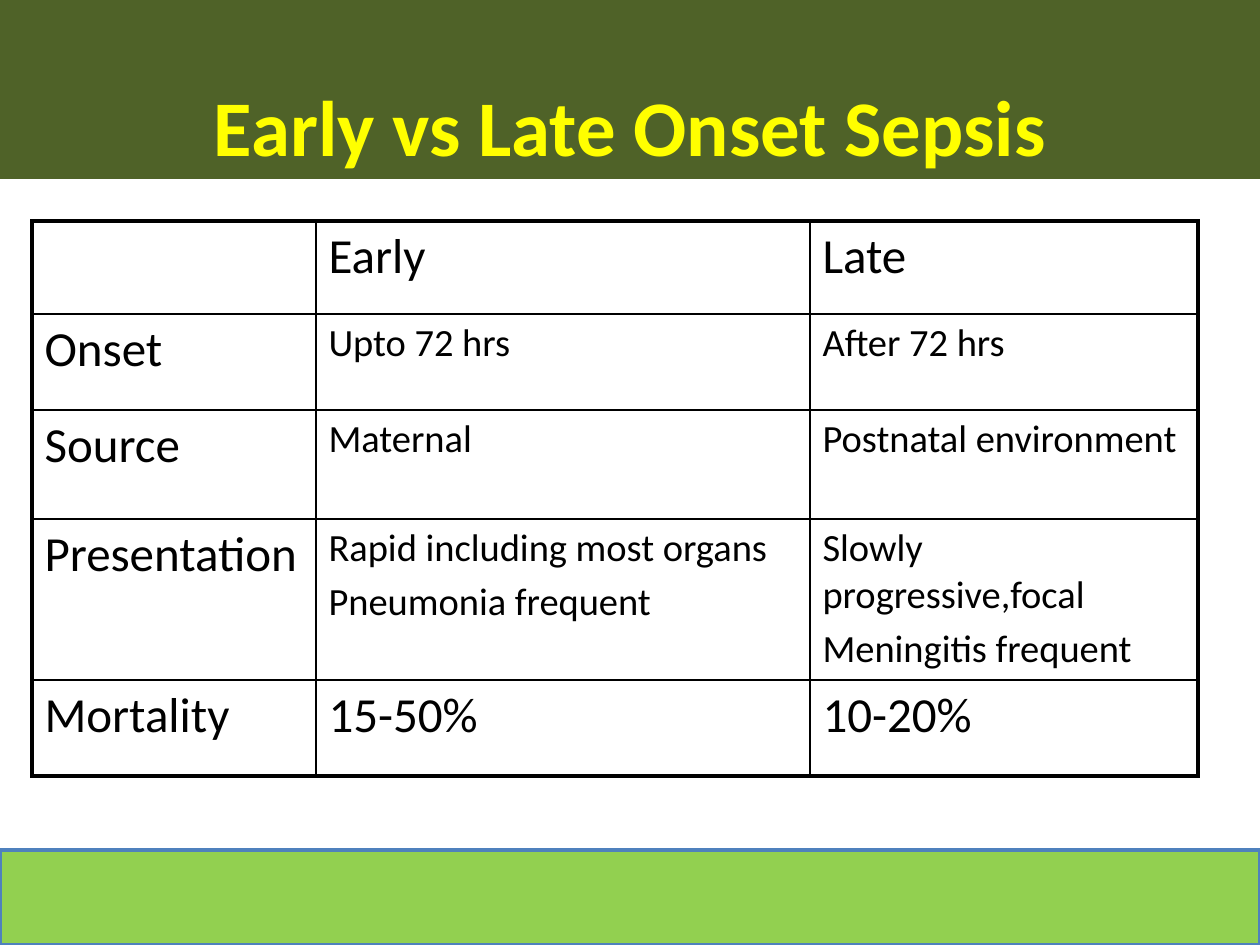
from lxml import etree
from pptx import Presentation
from pptx import util as u
from pptx.dml.color import RGBColor
from pptx.enum import shapes, text
from pptx.oxml import ns

BLACK = RGBColor(0x00, 0x00, 0x00)
YELLOW = RGBColor(0xFF, 0xFF, 0x00)
OLIVE = RGBColor(0x4F, 0x62, 0x28)
LIME = RGBColor(0x92, 0xD0, 0x50)
BLUE = RGBColor(0x4F, 0x81, 0xBD)
PX = u.Inches(1) / 126


def px(n):
    return u.Emu(round(n * PX))


def write(tf, lines, size, color=BLACK, bold=False, align=text.PP_ALIGN.LEFT):
    """Write one paragraph per line, with a small gap between paragraphs."""
    tf.word_wrap = True
    for i, line in enumerate(lines):
        p = tf.paragraphs[0] if i == 0 else tf.add_paragraph()
        p.alignment = align
        p.space_before = u.Pt(4 if i else 0)
        r = p.add_run()
        r.text = line
        r.font.name = "Calibri"
        r.font.size = u.Pt(size)
        r.font.bold = bold
        r.font.color.rgb = color


prs = Presentation()
prs.slide_width, prs.slide_height = px(1260), px(945)
s = prs.slides.add_slide(prs.slide_layouts[5])

# Title band
title = s.shapes.title
title.left, title.top, title.width, title.height = px(0), px(0), px(1260), px(179)
title.fill.solid()
title.fill.fore_color.rgb = OLIVE
tf = title.text_frame
tf.auto_size = text.MSO_AUTO_SIZE.NONE
tf.vertical_anchor = text.MSO_ANCHOR.BOTTOM
write(tf, ["Early vs Late Onset Sepsis"], 45, color=YELLOW, bold=True,
      align=text.PP_ALIGN.CENTER)

# Footer band
footer = s.shapes.add_shape(shapes.MSO_SHAPE.RECTANGLE, px(0), px(850), px(1260), px(95))
footer.shadow.inherit = False
footer.fill.solid()
footer.fill.fore_color.rgb = LIME
footer.line.color.rgb = BLUE
footer.line.width = u.Pt(2)

# Comparison table: a cell holds a list of paragraphs
rows = [
    [[], ["Early"], ["Late"]],
    [["Onset"], ["Upto 72 hrs"], ["After 72 hrs"]],
    [["Source"], ["Maternal"], ["Postnatal environment"]],
    [["Presentation"],
     ["Rapid including most organs", "Pneumonia frequent"],
     ["Slowly progressive,focal", "Meningitis frequent"]],
    [["Mortality"], ["15-50%"], ["10-20%"]],
]
col_widths = [284, 494, 388]
row_heights = [93, 96, 109, 161, 96]
last_row, last_col = len(rows) - 1, len(col_widths) - 1

table = s.shapes.add_table(len(rows), len(col_widths), px(32), px(221),
                           px(sum(col_widths)), px(sum(row_heights))).table
table.first_row = table.horz_banding = False
for column, width in zip(table.columns, col_widths):
    column.width = px(width)
for row, height in zip(table.rows, row_heights):
    row.height = px(height)

for i, row in enumerate(rows):
    for j, lines in enumerate(row):
        cell = table.cell(i, j)
        detail = 0 < i < last_row and j > 0
        write(cell.text_frame, lines, 22 if detail else 28)

        # Thick outer frame, thin inner rules; borders precede the fill
        tcPr = cell._tc.get_or_add_tcPr()
        outer = {"lnL": j == 0, "lnR": j == last_col, "lnT": i == 0, "lnB": i == last_row}
        for tag, thick in outer.items():
            ln = etree.SubElement(tcPr, ns.qn("a:" + tag), w=str(u.Pt(2.25 if thick else 1)))
            fill = etree.SubElement(ln, ns.qn("a:solidFill"))
            etree.SubElement(fill, ns.qn("a:srgbClr"), val=str(BLACK))
        cell.fill.background()

prs.save("out.pptx")
